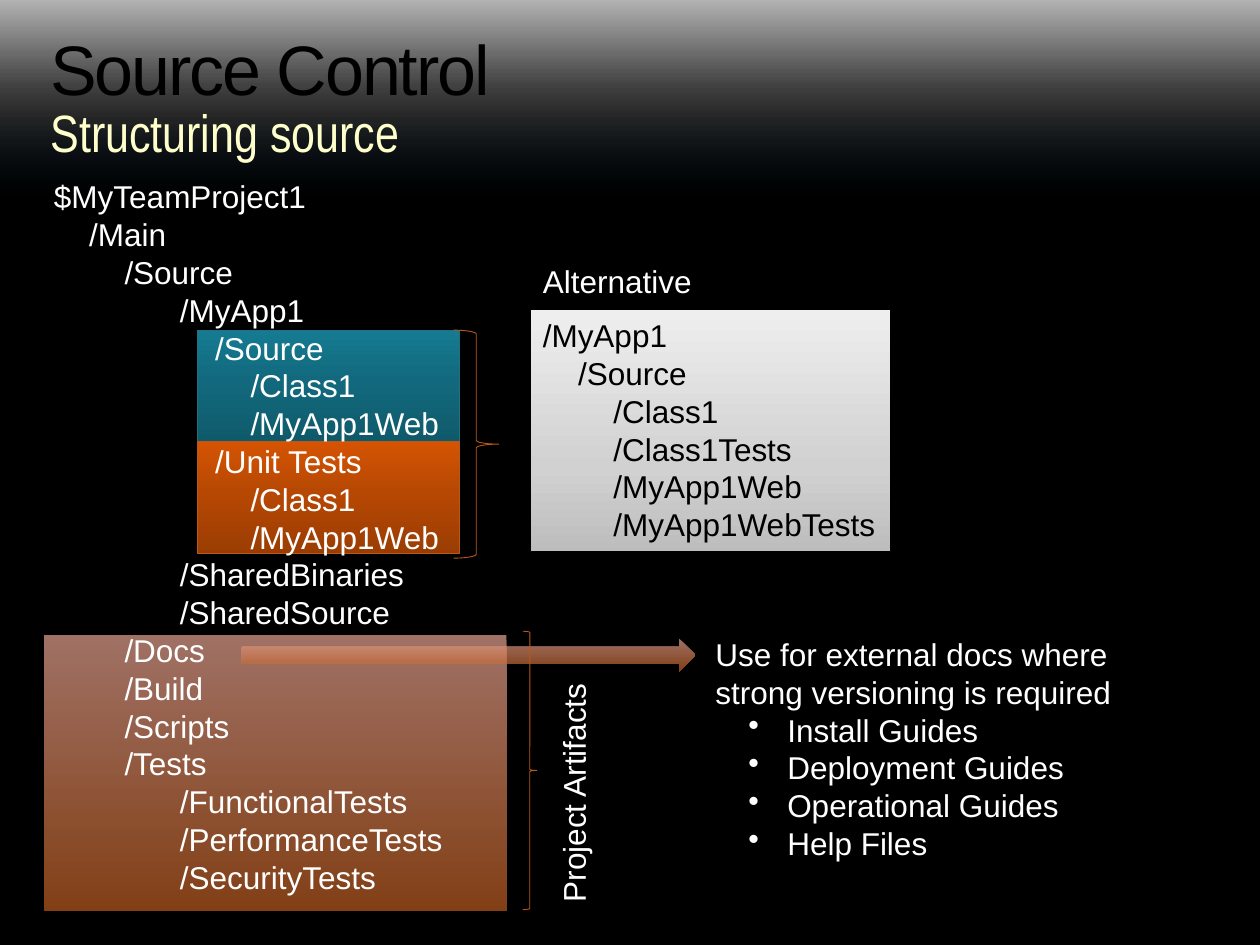
from lxml import etree
from pptx import Presentation
from pptx.dml.color import RGBColor
from pptx.enum.shapes import MSO_SHAPE
from pptx.enum.text import MSO_ANCHOR, PP_ALIGN
from pptx.oxml.ns import qn
from pptx.util import Inches, Pt

RECT, BRACE, ARROW = MSO_SHAPE.RECTANGLE, MSO_SHAPE.RIGHT_BRACE, MSO_SHAPE.RIGHT_ARROW
TOP, MIDDLE = MSO_ANCHOR.TOP, MSO_ANCHOR.MIDDLE
LEFT = PP_ALIGN.LEFT

BLACK = RGBColor(0x00, 0x00, 0x00)
WHITE = RGBColor(0xFF, 0xFF, 0xFF)
CREAM = RGBColor(0xFF, 0xFF, 0xCC)
TEAL_EDGE = RGBColor(0x23, 0x70, 0x81)
RUST = RGBColor(0xBA, 0x58, 0x1C)

HEADER_FADE = [(0, "FFFFFF", 70), (44, "FFFFFF", 25), (59, "FFFFFF", 15), (100, "0070C0", 0)]
TEAL_FADE = [(0, "157B92", 100), (45, "12697D", 100), (100, "0F5A6A", 100)]
ORANGE_FADE = [(0, "D55403", 100), (45, "B74803", 100), (100, "9B3D03", 100)]
COPPER_FADE = [(0, "E4A291", 70), (100, "BA5B20", 70)]
GRAY_FADE = [(0, "EEEEEE", 100), (65, "D1D1D1", 100), (100, "BDBDBD", 100)]

STEP, TAB = 0.28, 1.0

PROJECT_TREE = [
    (0, "$MyTeamProject1"),
    (STEP, "/Main"),
    (2 * STEP, "/Source"),
    (TAB, "/MyApp1"),
    (TAB + STEP, "/Source"),
    (TAB + 2 * STEP, "/Class1"),
    (TAB + 2 * STEP, "/MyApp1Web"),
    (TAB + STEP, "/Unit Tests"),
    (TAB + 2 * STEP, "/Class1"),
    (TAB + 2 * STEP, "/MyApp1Web"),
    (TAB, "/SharedBinaries"),
    (TAB, "/SharedSource"),
    (2 * STEP, "/Docs"),
    (2 * STEP, "/Build"),
    (2 * STEP, "/Scripts"),
    (2 * STEP, "/Tests"),
    (TAB, "/FunctionalTests"),
    (TAB, "/PerformanceTests"),
    (TAB, "/SecurityTests"),
]
ALTERNATIVE_TREE = [
    (0, "/MyApp1"),
    (STEP, "/Source"),
    (2 * STEP, "/Class1"),
    (2 * STEP, "/Class1Tests"),
    (2 * STEP, "/MyApp1Web"),
    (2 * STEP, "/MyApp1WebTests"),
]
DOCS_USE = [(0, "Use for external docs where"), (0, "strong versioning is required")]
GUIDES = ["Install Guides", "Deployment Guides", "Operational Guides", "Help Files"]
GUIDE_INDENT, GUIDE_HANG = 0.57, 0.31


def place(part, box):
    part.left, part.top, part.width, part.height = map(Inches, box)


def apply_gradient(shape, stops):
    shape.fill.gradient()
    gradient = shape._element.spPr.find(qn("a:gradFill"))
    stop_list = gradient.find(qn("a:gsLst"))
    for old in list(stop_list):
        stop_list.remove(old)
    for position, color, opacity in stops:
        stop = etree.SubElement(stop_list, qn("a:gs"), pos=str(position * 1000))
        rgb = etree.SubElement(stop, qn("a:srgbClr"), val=color)
        if opacity < 100:
            etree.SubElement(rgb, qn("a:alpha"), val=str(opacity * 1000))
    gradient.find(qn("a:lin")).set("ang", "5400000")


def add_panel(slide, kind, box, stops=None, edge=None):
    panel = slide.shapes.add_shape(kind, *map(Inches, box))
    panel.shadow.inherit = False
    if stops:
        apply_gradient(panel, stops)
    else:
        panel.fill.background()
    if edge is None:
        panel.line.fill.background()
    else:
        panel.line.color.rgb = edge
        panel.line.width = Pt(0.5)
    return panel


def add_run(paragraph, text, size, color, font="Arial"):
    run = paragraph.add_run()
    run.text = text
    run.font.size = Pt(size)
    run.font.name = font
    run.font.color.rgb = color
    return run


def set_indent(paragraph, left, hang=0.0, bullet=None):
    props = paragraph._p.get_or_add_pPr()
    props.set("marL", str(Inches(left)))
    props.set("indent", str(-Inches(hang)))
    if bullet:
        etree.SubElement(props, qn("a:buChar"), char=bullet)
    else:
        etree.SubElement(props, qn("a:buNone"))


def write_lines(frame, lines, color, bullets=()):
    frame.word_wrap = True
    frame.vertical_anchor = TOP
    frame.margin_right = 0
    entries = [(left, 0, None, text) for left, text in lines]
    entries += [(GUIDE_INDENT, GUIDE_HANG, "•", text) for text in bullets]
    for index, (left, hang, bullet, text) in enumerate(entries):
        paragraph = frame.add_paragraph() if index else frame.paragraphs[0]
        set_indent(paragraph, left, hang, bullet)
        paragraph.alignment = LEFT
        paragraph.line_spacing = Pt(21.6)
        add_run(paragraph, text, 18, color)


def add_text(slide, box, lines, bullets=()):
    label = slide.shapes.add_textbox(*map(Inches, box))
    write_lines(label.text_frame, lines, WHITE, bullets)
    return label


def write_heading(placeholder, box, text, size, color, font, inset):
    place(placeholder, box)
    frame = placeholder.text_frame
    frame.word_wrap = True
    frame.margin_left = 0
    frame.margin_top = frame.margin_bottom = Inches(inset)
    frame.vertical_anchor = MIDDLE
    paragraph = frame.paragraphs[0]
    set_indent(paragraph, 0)
    paragraph.alignment = LEFT
    paragraph.line_spacing = 0.9
    paragraph.space_before = Pt(0)
    return add_run(paragraph, text, size, color, font)


def main():
    deck = Presentation()
    deck.slide_width, deck.slide_height = Inches(10), Inches(7.5)
    slide = deck.slides.add_slide(deck.slide_layouts[1])
    slide.background.fill.solid()
    slide.background.fill.fore_color.rgb = BLACK
    title, subtitle = slide.placeholders

    header = add_panel(slide, RECT, (0, 0, 10, 1.54), HEADER_FADE)
    title._element.addprevious(header._element)
    heading = write_heading(title, (0.4, 0.24, 9.17, 0.67), "Source Control", 40, BLACK, "Arial", 0.05)
    heading._r.get_or_add_rPr().set("spc", "-120")
    write_heading(subtitle, (0.4, 0.85, 9.18, 0.45), "Structuring source", 30, CREAM, "Arial Narrow", 0)

    add_panel(slide, RECT, (1.57, 2.62, 2.08, 0.89), TEAL_FADE, TEAL_EDGE)
    add_panel(slide, RECT, (1.57, 3.5, 2.08, 0.89), ORANGE_FADE, RUST)
    add_panel(slide, RECT, (0.35, 5.04, 3.67, 2.19), COPPER_FADE)
    add_text(slide, (0.33, 1.36, 3.32, 5.86), PROJECT_TREE)
    add_panel(slide, BRACE, (3.6, 2.62, 0.36, 1.81), edge=RUST)

    alternative = add_panel(slide, RECT, (4.21, 2.46, 2.86, 1.92), GRAY_FADE, BLACK)
    write_lines(alternative.text_frame, ALTERNATIVE_TREE, BLACK)
    add_text(slide, (4.21, 2.03, 1.39, 0.4), [(0, "Alternative")])

    add_panel(slide, ARROW, (1.92, 5.07, 3.6, 0.26), COPPER_FADE)
    add_text(slide, (5.58, 4.99, 3.41, 1.92), DOCS_USE, GUIDES)
    add_panel(slide, BRACE, (4.15, 5.01, 0.11, 2.21), edge=RUST)
    artifacts = add_text(slide, (3.57, 6.08, 1.96, 0.4), [(0, "Project Artifacts")])
    artifacts.rotation = 270

    deck.save("out.pptx")


if __name__ == "__main__":
    main()
